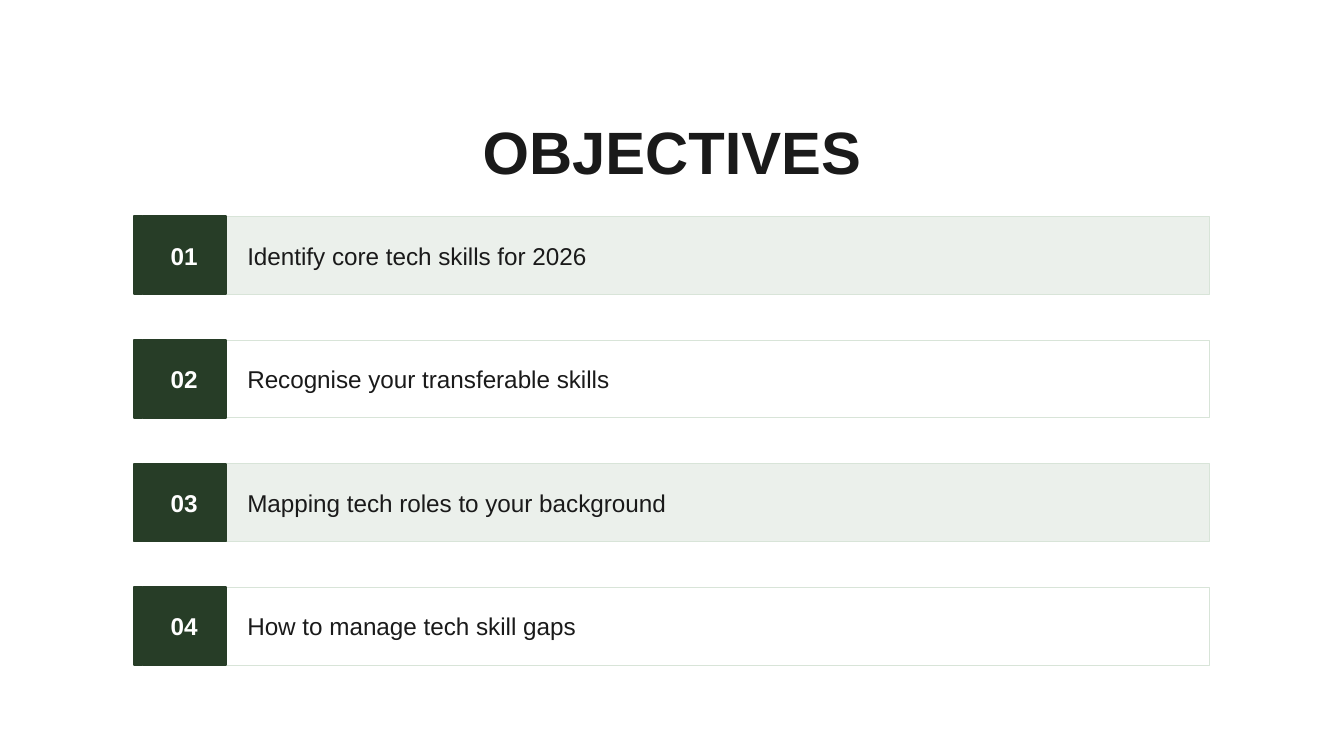
"""Build the numbered objectives slide."""
from dataclasses import dataclass

import pptx
import pptx.dml.color
import pptx.enum.shapes
import pptx.enum.text
import pptx.util
from pptx.util import Inches


@dataclass(frozen=True)
class Theme:
    font: str = "Arial"
    ink: str = "1A1A1A"
    white: str = "FFFFFF"
    green: str = "273D27"
    tint: str = "EBF0EB"
    border: str = "D8E4D8"
    title_size: int = 32
    body_size: int = 13


theme = Theme()
Align = pptx.enum.text.PP_ALIGN


def write_text(shape, text, size=theme.body_size, color=theme.ink, bold=False, align=Align.LEFT):
    frame = shape.text_frame
    frame.word_wrap = True
    frame.auto_size = pptx.enum.text.MSO_AUTO_SIZE.SHAPE_TO_FIT_TEXT
    frame.vertical_anchor = pptx.enum.text.MSO_ANCHOR.MIDDLE
    frame.margin_left = frame.margin_right = frame.margin_top = frame.margin_bottom = 0
    paragraph = frame.paragraphs[0]
    paragraph.alignment = align
    run = paragraph.add_run()
    run.text = text
    run.font.name = theme.font
    run.font.size = pptx.util.Pt(size)
    run.font.bold = bold
    run.font.color.rgb = pptx.dml.color.RGBColor.from_string(color)


def add_rectangle(slide, left, top, width, height, fill, line, line_width):
    shape = slide.shapes.add_shape(
        pptx.enum.shapes.MSO_SHAPE.RECTANGLE,
        Inches(left), Inches(top), Inches(width), Inches(height))
    shape.shadow.inherit = False
    shape.fill.solid()
    shape.fill.fore_color.rgb = pptx.dml.color.RGBColor.from_string(fill)
    shape.line.color.rgb = pptx.dml.color.RGBColor.from_string(line)
    shape.line.width = pptx.util.Pt(line_width)


presentation = pptx.Presentation()
presentation.slide_width = Inches(10)
presentation.slide_height = Inches(10 * 9 / 16)
slide = presentation.slides.add_slide(presentation.slide_layouts[5])

title = slide.shapes.title
title.left, title.top = Inches(0.7), Inches(0.87)
title.width, title.height = Inches(8.6), Inches(0.5)
write_text(title, "OBJECTIVES", size=theme.title_size, bold=True, align=Align.CENTER)

objectives = [
    "Identify core tech skills for 2026",
    "Recognise your transferable skills",
    "Mapping tech roles to your background",
    "How to manage tech skill gaps",
]
first_top, row_pitch, row_height = 1.61, 0.92, 0.58
text_offset, text_height = 0.19, 0.2

for index, objective in enumerate(objectives):
    top = first_top + index * row_pitch
    row_fill = theme.white if index % 2 else theme.tint
    add_rectangle(slide, 1, top, 8, row_height, row_fill, theme.border, 0.5)
    add_rectangle(slide, 1, top, 0.06, row_height, theme.green, theme.green, 1)
    add_rectangle(slide, 1.06, top, 0.62, row_height, theme.green, theme.green, 1)

    text_top = Inches(top + text_offset)
    number = slide.shapes.add_textbox(Inches(1.06), text_top, Inches(0.62), Inches(text_height))
    write_text(number, f"{index + 1:02d}", color=theme.white, bold=True, align=Align.CENTER)
    label = slide.shapes.add_textbox(Inches(1.84), text_top, Inches(7), Inches(text_height))
    write_text(label, objective)

presentation.save("out.pptx")
